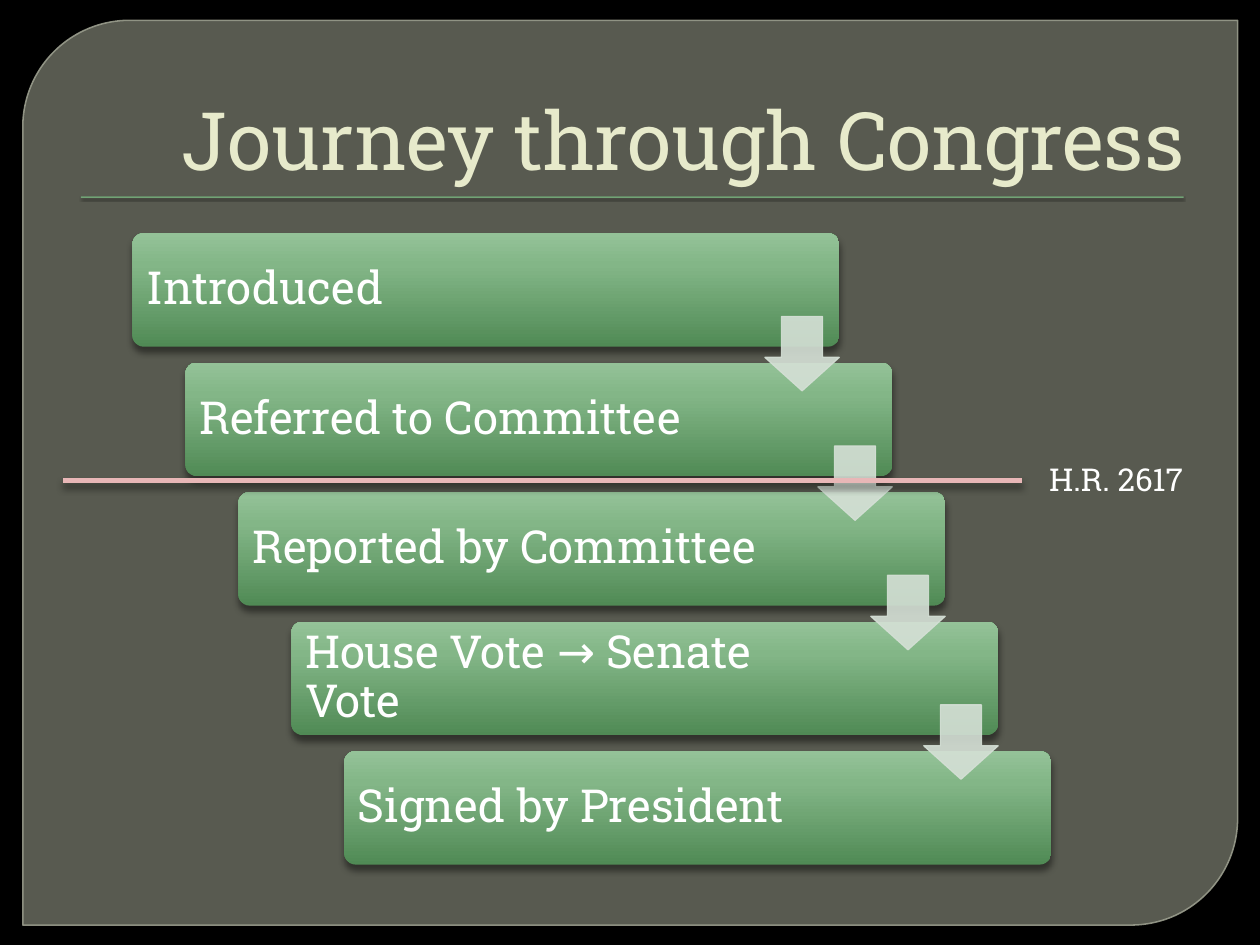
from lxml import etree
from pptx import Presentation
from pptx import util as u
from pptx.dml import color
from pptx.enum import shapes, text
from pptx.oxml import ns

COLORS = {
    "background": "000000",
    "panel": "888B7B",
    "panel_line": "9DA090",
    "rule": "72A376",
    "title": "E7EACB",
    "text": "FFFFFF",
    "step_dark": "508A55",
    "step_middle": "83B687",
    "step_light": "94C298",
    "arrow": "D5E0D6",
    "marker": "E8B7B7",
    "shadow": "000000",
}
FONT = "Roboto Slab"
STEPS = [
    "Introduced",
    "Referred to Committee",
    "Reported by Committee",
    "House Vote → Senate Vote",
    "Signed by President",
]


def rgb(name):
    return color.RGBColor.from_string(COLORS[name])


def add_child(parent, tag, **attributes):
    child = etree.SubElement(parent, ns.qn(tag))
    for key, value in attributes.items():
        child.set(key, str(value))
    return child


def add_color(parent, name, alpha=100):
    element = add_child(parent, "a:srgbClr", val=COLORS[name])
    if alpha < 100:
        add_child(element, "a:alpha", val=alpha * 1000)


def set_transparency(fill_parent, alpha):
    element = fill_parent.find(ns.qn("a:solidFill")).find(ns.qn("a:srgbClr"))
    add_child(element, "a:alpha", val=alpha * 1000)


def add_shadow(shape, alpha=43, blur=4, distance=3):
    effects = add_child(shape._element.spPr, "a:effectLst")
    shadow = add_child(
        effects, "a:outerShdw", blurRad=u.Pt(blur), dist=u.Pt(distance),
        dir=5400000, rotWithShape=0,
    )
    add_color(shadow, "shadow", alpha)


def add_step_gradient(shape):
    properties = shape._element.spPr
    gradient = etree.Element(ns.qn("a:gradFill"), rotWithShape="1")
    stops = add_child(gradient, "a:gsLst")
    for position, name in [(0, "step_dark"), (72, "step_middle"), (100, "step_light")]:
        add_color(add_child(stops, "a:gs", pos=position * 1000), name)
    add_child(gradient, "a:lin", ang=16200000, scaled=0)
    properties.find(ns.qn("a:prstGeom")).addnext(gradient)


def add_box(slide, kind, box, adjustments=(), fill=None, line=None):
    shape = slide.shapes.add_shape(kind, *[u.Cm(value) for value in box])
    for index, value in enumerate(adjustments):
        shape.adjustments[index] = value
    if fill:
        shape.fill.solid()
        shape.fill.fore_color.rgb = rgb(fill)
    if line:
        shape.line.color.rgb = rgb(line)
    else:
        shape.line.fill.background()
    return shape


def write_text(shape, words, size, name="text", align=text.PP_ALIGN.LEFT,
               anchor=text.MSO_ANCHOR.TOP, wrap=True, spacing=None):
    frame = shape.text_frame
    frame.word_wrap = wrap
    frame.vertical_anchor = anchor
    paragraph = frame.paragraphs[0]
    paragraph.alignment = align
    paragraph.line_spacing = spacing
    run = paragraph.add_run()
    run.text = words
    run.font.name = FONT
    run.font.size = u.Pt(size)
    run.font.color.rgb = rgb(name)
    return frame


def add_panel(slide, box):
    left, top, width, height = box
    panel = add_box(slide, shapes.MSO_SHAPE.ROUND_2_DIAG_RECTANGLE, box,
                    (0.118, 0), "panel", "panel_line")
    panel.shadow.inherit = False
    panel.line.width = u.Pt(0.87)
    set_transparency(panel._element.spPr, 65)
    set_transparency(panel.line._ln, 88)
    rule = add_box(slide, shapes.MSO_SHAPE.RECTANGLE,
                   (left + 1.17, top + 3.55, 22.23, 0.03), fill="rule")
    add_shadow(rule, 75, 1, 1)


def add_title(slide, box):
    title = slide.shapes.add_textbox(*[u.Cm(value) for value in box])
    write_text(title, "Journey through Congress", 46, "title",
               text.PP_ALIGN.RIGHT, text.MSO_ANCHOR.BOTTOM)


def add_step(slide, words, box):
    step = add_box(slide, shapes.MSO_SHAPE.ROUNDED_RECTANGLE, box, (0.1,))
    add_step_gradient(step)
    add_shadow(step)
    frame = write_text(step, words, 26, anchor=text.MSO_ANCHOR.MIDDLE, spacing=0.9)
    frame.margin_left = frame.margin_top = frame.margin_bottom = u.Cm(0.21)
    frame.margin_right = u.Cm(2.78)


def add_arrow(slide, box):
    arrow = add_box(slide, shapes.MSO_SHAPE.DOWN_ARROW, box,
                    (0.55, 0.45), "arrow", "arrow")
    arrow.shadow.inherit = False
    arrow.line.width = u.Pt(0.75)
    set_transparency(arrow._element.spPr, 90)
    set_transparency(arrow.line._ln, 90)


def add_staircase(slide, box):
    left, top, width, height = box
    step_width, step_height, arrow_size = 14.25, 2.29, 1.5
    shift = (width - step_width) / (len(STEPS) - 1)
    drop = (height - step_height) / (len(STEPS) - 1)
    corners = [(left + index * shift, top + index * drop) for index in range(len(STEPS))]
    for words, (x, y) in zip(STEPS, corners):
        add_step(slide, words, (x, y, step_width, step_height))
    for x, y in corners[:-1]:
        add_arrow(slide, (x + step_width - arrow_size, y + 1.68, arrow_size, arrow_size))


def add_bill_marker(slide, box):
    left, top, width, height = box
    label_width = 3.23
    middle = u.Cm(top + height / 2 + 0.03)
    line = slide.shapes.add_connector(
        shapes.MSO_CONNECTOR.STRAIGHT, u.Cm(left), middle,
        u.Cm(left + width - label_width - 0.3), middle,
    )
    line.line.color.rgb = rgb("marker")
    line.line.width = u.Pt(3)
    add_shadow(line)
    label = slide.shapes.add_textbox(
        u.Cm(left + width - label_width), u.Cm(top), u.Cm(label_width), u.Cm(height))
    write_text(label, "H.R. 2617", 18, wrap=False)


def main():
    presentation = Presentation()
    presentation.slide_width = u.Cm(25.4)
    presentation.slide_height = u.Cm(19.05)
    slide = presentation.slides.add_slide(presentation.slide_layouts[6])
    slide.background.fill.solid()
    slide.background.fill.fore_color.rgb = rgb("background")
    add_panel(slide, (0.46, 0.41, 24.49, 18.24))
    add_title(slide, (1.27, 0.71, 22.86, 3.18))
    add_staircase(slide, (2.67, 4.7, 18.52, 12.73))
    add_bill_marker(slide, (1.27, 9.14, 22.86, 1.02))
    presentation.save("out.pptx")


if __name__ == "__main__":
    main()
